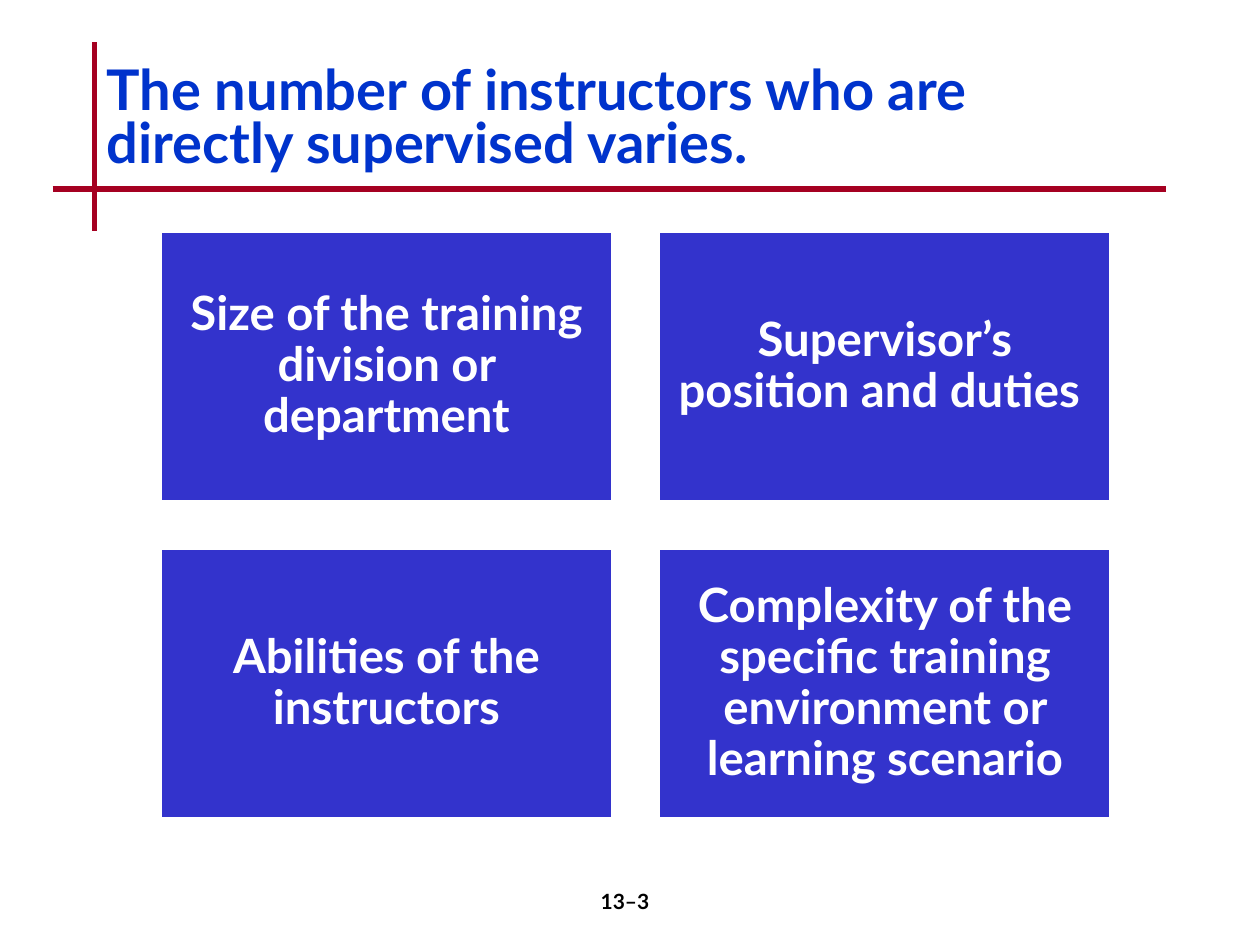
import pptx
import pptx.util
from pptx.dml.color import RGBColor
from pptx.enum.shapes import MSO_CONNECTOR, MSO_SHAPE
from pptx.enum.text import MSO_ANCHOR, PP_ALIGN
from pptx.oxml.ns import qn
from pptx.util import Cm
import lxml.etree

RED = RGBColor(0xA5, 0x00, 0x21)
BLUE = RGBColor(0x00, 0x33, 0xCC)
INDIGO = RGBColor(0x33, 0x33, 0xCC)
WHITE = RGBColor(0xFF, 0xFF, 0xFF)
BLACK = RGBColor(0x00, 0x00, 0x00)


class SlideBuilder:
    """Holds the slide and the style shared by its elements."""

    font_name = "Lato"

    def __init__(self, page):
        self.page = page

    def rule(self, x1, y1, x2, y2):
        line = self.page.shapes.add_connector(
            MSO_CONNECTOR.STRAIGHT, Cm(x1), Cm(y1), Cm(x2), Cm(y2))
        line.line.color.rgb = RED
        line.line.width = pptx.util.Pt(3)
        lxml.etree.SubElement(line._element.spPr, qn("a:effectLst"))

    def set_text(self, box, text, size, color, align, anchor, spacing=1.0):
        frame = box.text_frame
        frame.word_wrap = True
        frame.vertical_anchor = anchor
        frame.text = text
        para = frame.paragraphs[0]
        para.alignment = align
        para.line_spacing = spacing
        font = para.runs[0].font
        font.name = self.font_name
        font.size = pptx.util.Pt(size)
        font.bold = True
        font.color.rgb = color

    def label(self, left, top, width, height, *style):
        box = self.page.shapes.add_textbox(
            Cm(left), Cm(top), Cm(width), Cm(height))
        self.set_text(box, *style)

    def tile(self, left, top, width, height, text):
        box = self.page.shapes.add_shape(
            MSO_SHAPE.RECTANGLE, Cm(left), Cm(top), Cm(width), Cm(height))
        box.shadow.inherit = False
        box.fill.solid()
        box.fill.fore_color.rgb = INDIGO
        box.line.color.rgb = WHITE
        box.line.width = pptx.util.Pt(2)
        frame = box.text_frame
        frame.margin_left = frame.margin_right = Cm(0.28)
        frame.margin_top = frame.margin_bottom = Cm(0.28)
        self.set_text(box, text, 27, WHITE,
                      PP_ALIGN.CENTER, MSO_ANCHOR.MIDDLE, 0.9)


def main():
    deck = pptx.Presentation()
    deck.slide_width, deck.slide_height = Cm(25.4), Cm(19.05)
    builder = SlideBuilder(deck.slides.add_slide(deck.slide_layouts[6]))

    # Crossed rules beside and below the title
    builder.rule(1.9, 0.85, 1.9, 4.66)
    builder.rule(1.06, 3.81, 23.5, 3.81)

    # Two-by-two grid of factors
    factors = [
        "Size of the training division or department",
        "Supervisor’s position and duties ",
        "Abilities of the instructors",
        "Complexity of the specific training environment or learning scenario",
    ]
    width, height, gap = 9.12, 5.46, 0.93
    for index, factor in enumerate(factors):
        row, column = divmod(index, 2)
        builder.tile(3.23 + column * (width + gap), 4.66 + row * (height + gap),
                     width, height, factor)

    # Title and page number
    builder.label(1.9, 0.85, 21.6, 3.18,
                  "The number of instructors who are directly supervised varies.",
                  32, BLUE, PP_ALIGN.LEFT, MSO_ANCHOR.MIDDLE, 0.8)
    builder.label(9.95, 17.78, 5.3, 1.27, "13–3",
                  12, BLACK, PP_ALIGN.CENTER, MSO_ANCHOR.TOP)

    deck.save("out.pptx")


if __name__ == "__main__":
    main()
